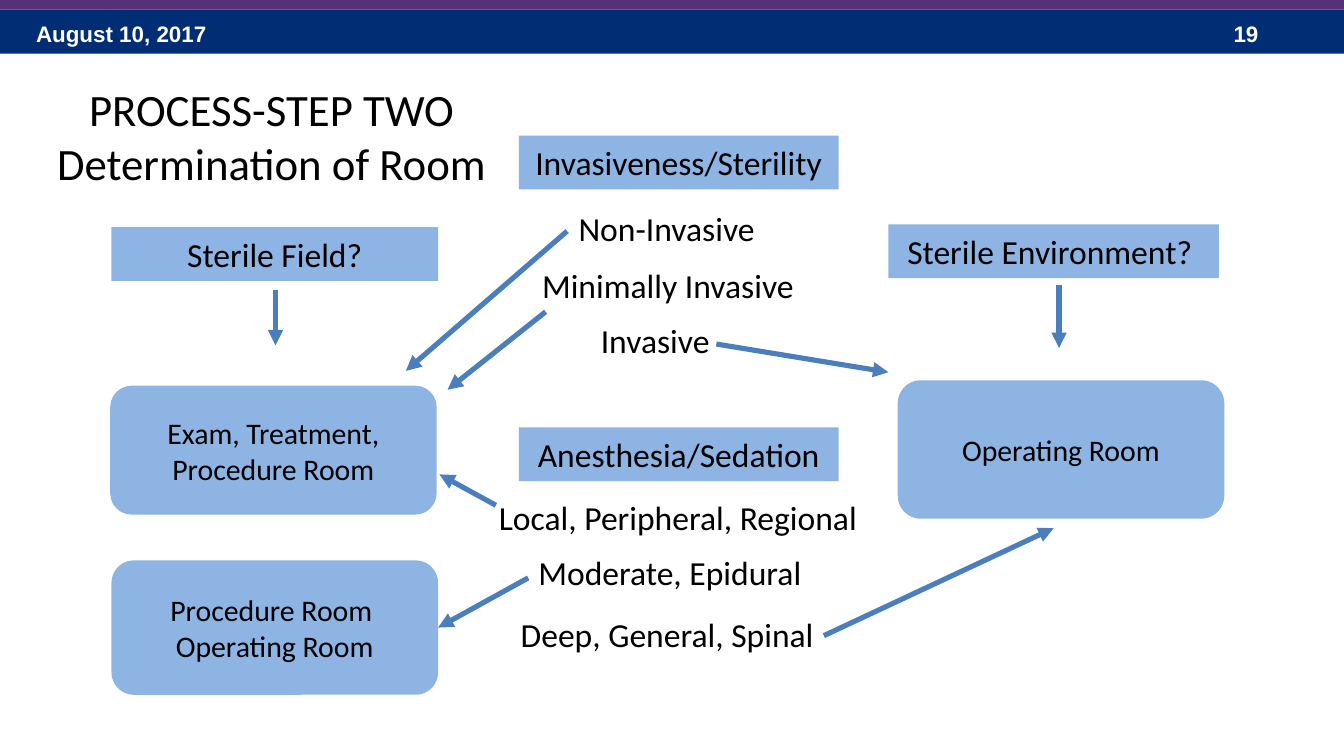
from pptx import Presentation
from pptx.dml.color import RGBColor
from pptx.enum.shapes import MSO_CONNECTOR, MSO_SHAPE
from pptx.enum.text import MSO_ANCHOR, PP_ALIGN
from pptx.oxml.ns import qn
from pptx.util import Inches, Pt
from lxml import etree

NAVY = RGBColor(0x00, 0x2D, 0x73)
PURPLE = RGBColor(0x55, 0x32, 0x78)
LIGHT_BLUE = RGBColor(0x8E, 0xB4, 0xE3)
ARROW_BLUE = RGBColor(0x4B, 0x7E, 0xBC)
BLACK = RGBColor(0, 0, 0)
WHITE = RGBColor(0xFF, 0xFF, 0xFF)

BODY = {"name": "Calibri", "size": Pt(18)}
ROOM = {"name": "Calibri", "size": Pt(16)}
TITLE = {"name": "Calibri", "size": Pt(24)}
HEADER = {"name": "Arial", "size": Pt(12), "bold": True}


def write(shape, text, font, color=BLACK, align=PP_ALIGN.CENTER, anchor=MSO_ANCHOR.TOP):
    frame = shape.text_frame
    frame.text = text
    frame.word_wrap = True
    frame.vertical_anchor = anchor
    for paragraph in frame.paragraphs:
        paragraph.alignment = align
        for attribute, value in font.items():
            setattr(paragraph.font, attribute, value)
        paragraph.font.color.rgb = color


def add_block(preset, left, top, width, height, fill):
    block = slide.shapes.add_shape(
        preset, Inches(left), Inches(top), Inches(width), Inches(height))
    block.shadow.inherit = False
    block.fill.solid()
    block.fill.fore_color.rgb = fill
    block.line.fill.background()
    return block


# Widescreen slide, 16:9
prs = Presentation()
prs.slide_width, prs.slide_height = Inches(10), Inches(10 * 9 / 16)
slide = prs.slides.add_slide(prs.slide_layouts[5])

# Header band with date and page number
add_block(MSO_SHAPE.RECTANGLE, 0, 0.07, 10, 0.33, NAVY)
add_block(MSO_SHAPE.RECTANGLE, 0, -0.02, 10, 0.09, PURPLE)
for text, left, width in [("August 10, 2017", 0.17, 2.33), ("19", 9.08, 0.75)]:
    header = slide.shapes.add_textbox(Inches(left), Inches(0.1), Inches(width), Inches(0.3))
    write(header, text, HEADER, WHITE, PP_ALIGN.LEFT, MSO_ANCHOR.MIDDLE)

# Title
title = slide.shapes.title
title.left, title.top = Inches(0.23), Inches(0.56)
title.width, title.height = Inches(3.58), Inches(0.91)
write(title, "PROCESS-STEP TWO\nDetermination of Room", TITLE)

# Criteria headings
for text, left, top, width in [
    ("Invasiveness/Sterility ", 3.86, 1.01, 2.38),
    ("Anesthesia/Sedation", 3.86, 3.18, 2.38),
    ("Sterile Field?", 0.83, 1.69, 2.43),
    ("Sterile Environment? ", 6.61, 1.67, 2.46),
]:
    criterion = add_block(MSO_SHAPE.RECTANGLE, left, top, width, 0.4, LIGHT_BLUE)
    write(criterion, text, BODY)

# Levels under each criterion
for text, left, top, width in [
    ("Non-Invasive", 3.77, 1.5, 2.38),
    ("Minimally Invasive", 3.78, 1.92, 2.38),
    ("Invasive", 4, 2.33, 1.75),
    ("Local, Peripheral, Regional", 3.13, 3.65, 3.83),
    ("Moderate, Epidural", 3.07, 4.06, 3.83),
    ("Deep, General, Spinal", 3.05, 4.52, 3.83),
]:
    level = slide.shapes.add_textbox(Inches(left), Inches(top), Inches(width), Inches(0.4))
    write(level, text, BODY)

# Rooms
for text, left, top, height in [
    ("Exam, Treatment, Procedure Room", 0.82, 2.87, 0.96),
    ("Operating Room", 6.68, 2.83, 1.03),
    ("Procedure Room \nOperating Room", 0.83, 4.17, 1),
]:
    room = add_block(MSO_SHAPE.ROUNDED_RECTANGLE, left, top, 2.43, height, LIGHT_BLUE)
    write(room, text, ROOM, anchor=MSO_ANCHOR.MIDDLE)

# Arrows from criteria and levels to rooms
for x1, y1, x2, y2 in [
    (2.05, 2.16, 2.05, 2.57),
    (7.88, 2.12, 7.88, 2.59),
    (4.22, 1.72, 3.02, 2.76),
    (4.06, 2.32, 3.33, 2.9),
    (5.33, 2.56, 6.61, 2.77),
    (3.69, 3.76, 3.27, 3.53),
    (6.13, 4.73, 7.84, 3.93),
    (3.93, 4.3, 3.27, 4.65),
]:
    arrow = slide.shapes.add_connector(
        MSO_CONNECTOR.STRAIGHT, Inches(x1), Inches(y1), Inches(x2), Inches(y2))
    arrow.line.color.rgb = ARROW_BLUE
    arrow.line.width = Pt(2.75)
    etree.SubElement(arrow.line._get_or_add_ln(), qn("a:tailEnd"), type="triangle")
    etree.SubElement(arrow._element.spPr, qn("a:effectLst"))

# The last arrow meets the middle of the last room's right side
arrow.end_connect(room, 3)

prs.save("out.pptx")
